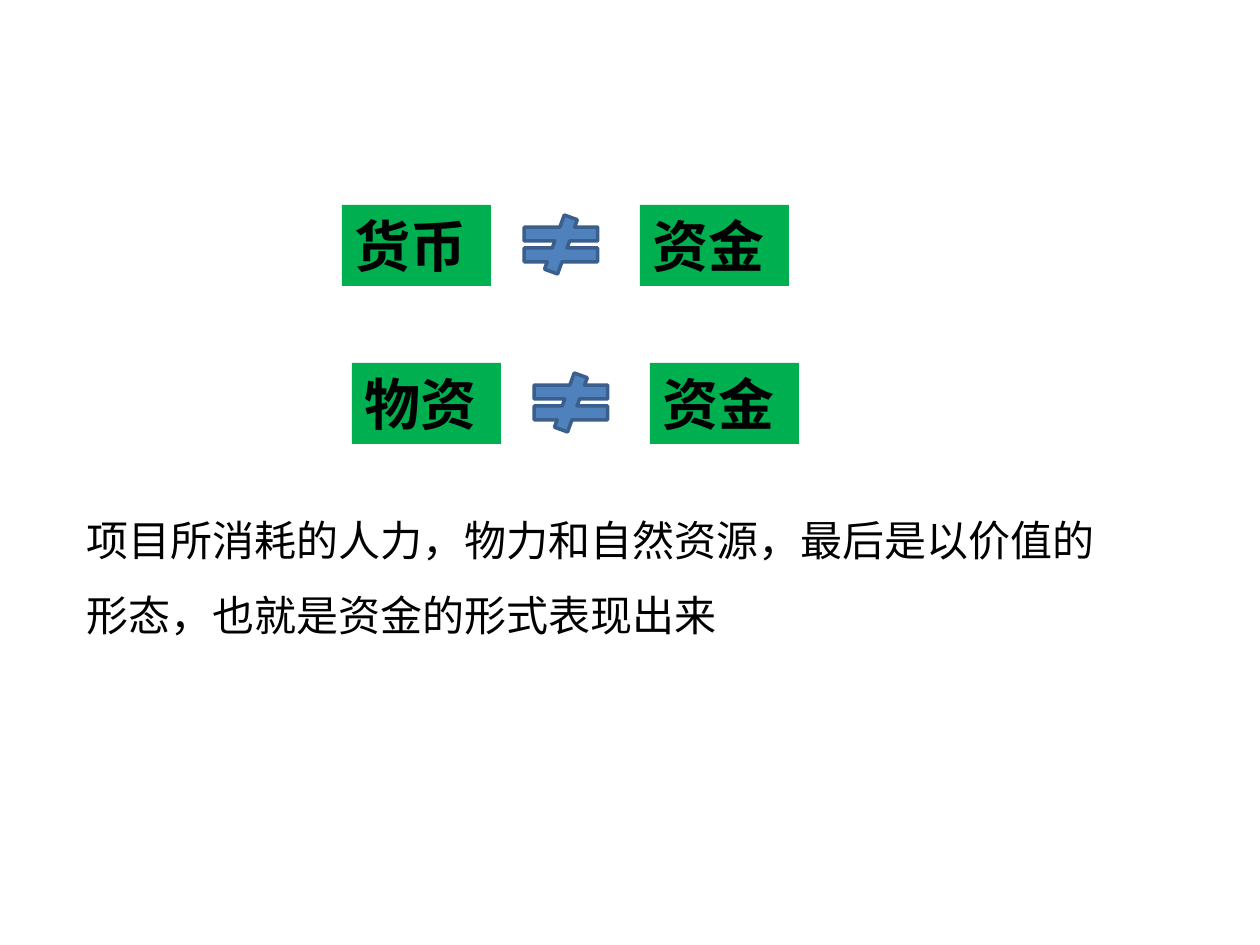
from dataclasses import dataclass

from pptx import Presentation
from pptx.dml.color import RGBColor
from pptx.enum.shapes import MSO_SHAPE
from pptx.enum.text import MSO_AUTO_SIZE, PP_ALIGN
from pptx.util import Emu, Pt

NOT_EQUAL = MSO_SHAPE.MATH_NOT_EQUAL
GROW = MSO_AUTO_SIZE.SHAPE_TO_FIT_TEXT
LEFT = PP_ALIGN.LEFT
PX = 914400 // 126


@dataclass(frozen=True)
class Theme:
    font: str = "Calibri"
    ink: RGBColor = RGBColor(0x00, 0x00, 0x00)
    term_fill: RGBColor = RGBColor(0x00, 0xB0, 0x50)
    sign_fill: RGBColor = RGBColor(0x4F, 0x81, 0xBD)
    sign_line: RGBColor = RGBColor(0x3A, 0x5F, 0x8C)
    sign_line_width: Pt = Pt(2)
    term_size: Pt = Pt(32)
    body_size: Pt = Pt(24)


THEME = Theme()
TERM_W, TERM_H, TERM_PITCH = 149, 81, 298
SIGN_W, SIGN_H = 100, 59
ROWS = [
    # left, top, sign left, left term, right term
    (342, 205, 511, "货币", "资金"),
    (352, 363, 521, "物资", "资金"),
]
CONCLUSION = "项目所消耗的人力，物力和自然资源，最后是以价值的形态，也就是资金的形式表现出来"


def px(*lengths):
    return [Emu(n * PX) for n in lengths]


def set_all(target, values):
    for name, value in values.items():
        setattr(target, name, value)


def add_text(slide, box, text, size, bold=False, spacing=1.0):
    sp = slide.shapes.add_textbox(*px(*box))
    tf = sp.text_frame
    set_all(tf, {"word_wrap": True, "auto_size": GROW})
    p = tf.paragraphs[0]
    set_all(p, {"alignment": LEFT, "line_spacing": spacing})
    r = p.add_run()
    r.text = text
    set_all(r.font, {"name": THEME.font, "size": size, "bold": bold})
    r.font.color.rgb = THEME.ink
    return sp


def add_term(slide, left, top, text):
    sp = add_text(slide, (left, top, TERM_W, TERM_H), text, THEME.term_size, bold=True)
    sp.fill.solid()
    sp.fill.fore_color.rgb = THEME.term_fill


def add_sign(slide, left, top):
    sp = slide.shapes.add_shape(NOT_EQUAL, *px(left, top, SIGN_W, SIGN_H))
    sp.shadow.inherit = False
    sp.fill.solid()
    sp.fill.fore_color.rgb = THEME.sign_fill
    sp.line.color.rgb = THEME.sign_line
    sp.line.width = THEME.sign_line_width


def add_inequality(slide, left, top, sign_left, first, second):
    add_term(slide, left + TERM_PITCH, top, second)
    add_term(slide, left, top, first)
    add_sign(slide, sign_left, top + (TERM_H - SIGN_H) // 2 - 1)


def main():
    prs = Presentation()
    prs.slide_width, prs.slide_height = px(1260, 945)
    slide = prs.slides.add_slide(prs.slide_layouts[6])
    for row in ROWS:
        add_inequality(slide, *row)
    add_text(slide, (74, 483, 1071, 156), CONCLUSION, THEME.body_size, spacing=1.5)
    prs.save("out.pptx")


if __name__ == "__main__":
    main()
